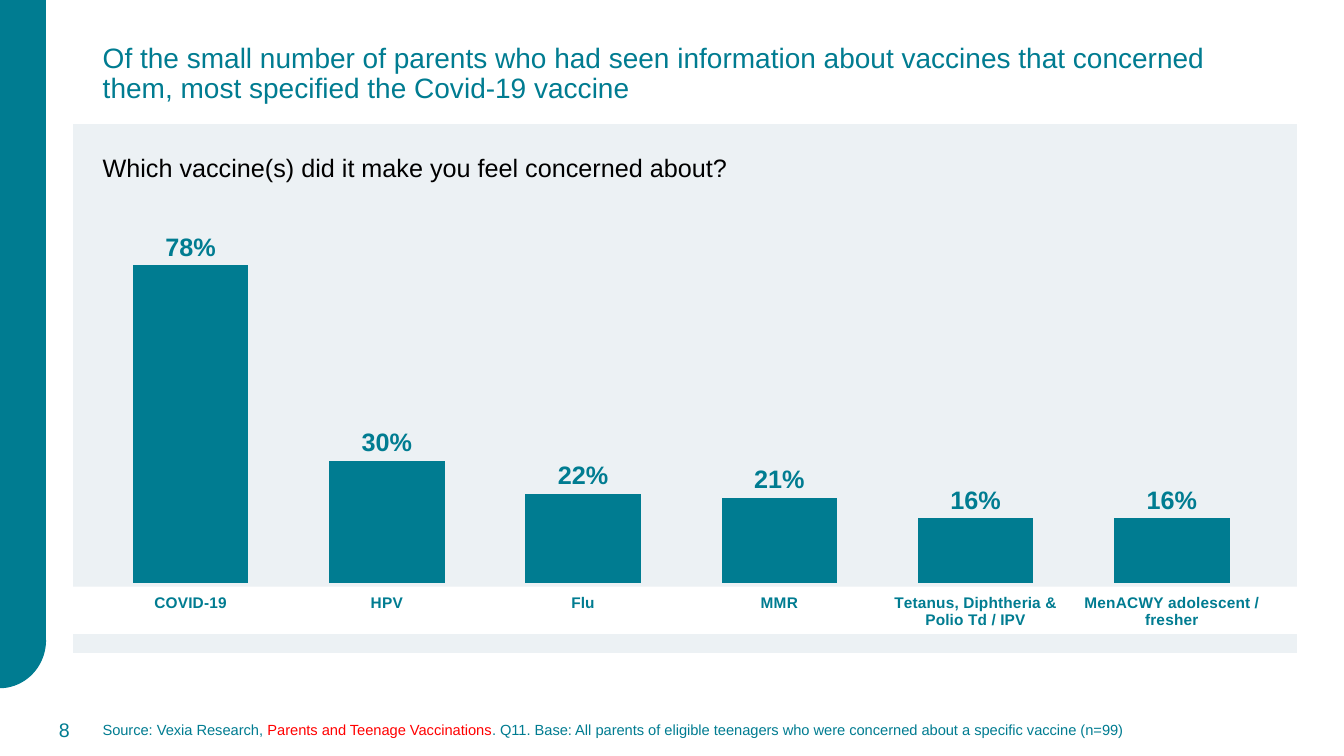
from lxml.etree import SubElement
from pptx import Presentation
from pptx.chart.data import CategoryChartData
from pptx.dml.color import RGBColor
from pptx.enum.chart import XL_CHART_TYPE, XL_LABEL_POSITION, XL_TICK_LABEL_POSITION, XL_TICK_MARK
from pptx.enum.shapes import MSO_SHAPE
from pptx.enum.text import MSO_ANCHOR, MSO_AUTO_SIZE, PP_ALIGN
from pptx.oxml.ns import qn
from pptx.util import Pt

TEAL = RGBColor(0x00, 0x7C, 0x91)
RED = RGBColor(0xFF, 0x00, 0x00)
BLACK = RGBColor(0x00, 0x00, 0x00)
WHITE = RGBColor(0xFF, 0xFF, 0xFF)
PALE_GREY = RGBColor(0xEC, 0xF1, 0xF4)

TEXT_LEFT = 66.2
PANEL_LEFT, PANEL_WIDTH = 51.1, 876.2
FOOTER_TOP, FOOTER_HEIGHT = 506.9, 28.8

VACCINE_SHARES = {
    "COVID-19": 0.78,
    "HPV": 0.30,
    "Flu": 0.22,
    "MMR": 0.21,
    "Tetanus, Diphtheria & Polio Td / IPV": 0.16,
    "MenACWY adolescent / fresher": 0.16,
}


class SlideBuilder:
    font_name = "Arial"

    def __init__(self, slide):
        self.slide = slide

    def format_font(self, font, size, color, bold=False):
        values = {"name": self.font_name, "size": Pt(size), "bold": bold}
        for name, value in values.items():
            setattr(font, name, value)
        font.color.rgb = color

    def fill_text(self, shape, runs, size, alignment=PP_ALIGN.LEFT,
                  anchor=MSO_ANCHOR.MIDDLE, line_spacing=None):
        """Fill a text shape with one paragraph of (text, colour) runs."""
        frame = shape.text_frame
        frame_format = {"word_wrap": True, "auto_size": MSO_AUTO_SIZE.NONE,
                        "vertical_anchor": anchor}
        for name, value in frame_format.items():
            setattr(frame, name, value)
        paragraph = frame.paragraphs[0]
        paragraph_format = {"alignment": alignment, "line_spacing": line_spacing}
        for name, value in paragraph_format.items():
            setattr(paragraph, name, value)
        for text, color in runs:
            run = paragraph.add_run()
            run.text = text
            self.format_font(run.font, size, color)

    def title(self, box, text, size):
        shape = self.slide.shapes.title
        for name, value in zip(("left", "top", "width", "height"), box):
            setattr(shape, name, Pt(value))
        self.fill_text(shape, [(text, TEAL)], size, line_spacing=0.9)

    def text(self, box, runs, size, **text_format):
        shape = self.slide.shapes.add_textbox(*map(Pt, box))
        self.fill_text(shape, runs, size, **text_format)

    def shape(self, kind, box, fill, line=None, line_width=1):
        shape = self.slide.shapes.add_shape(kind, *map(Pt, box))
        shape.shadow.inherit = False
        shape.fill.solid()
        shape.fill.fore_color.rgb = fill
        if line is None:
            shape.line.fill.background()
        else:
            shape.line.color.rgb = line
            shape.line.width = Pt(line_width)
        return shape

    def column_chart(self, box, shares):
        data = CategoryChartData(number_format="0%")
        data.categories = list(shares)
        data.add_series("Series 1", list(shares.values()))
        chart = self.slide.shapes.add_chart(
            XL_CHART_TYPE.COLUMN_CLUSTERED, *map(Pt, box), data).chart
        chart.has_legend = False
        chart.has_title = False
        self.format_font(chart.font, 10, BLACK)

        value_axis = chart.value_axis
        value_format = {"minimum_scale": 0, "maximum_scale": 0.9,
                        "has_major_gridlines": False, "visible": False}
        for name, value in value_format.items():
            setattr(value_axis, name, value)

        category_axis = chart.category_axis
        category_format = {"major_tick_mark": XL_TICK_MARK.NONE,
                           "minor_tick_mark": XL_TICK_MARK.NONE,
                           "tick_label_position": XL_TICK_LABEL_POSITION.LOW}
        for name, value in category_format.items():
            setattr(category_axis, name, value)
        category_axis.format.line.fill.background()
        self.format_font(category_axis.tick_labels.font, 11, TEAL, bold=True)

        plot = chart.plots[0]
        plot.gap_width = 70
        plot.vary_by_categories = False
        series = plot.series[0]
        series.format.fill.solid()
        series.format.fill.fore_color.rgb = TEAL

        labels = series.data_labels
        label_format = {"show_value": True, "number_format": "0%",
                        "number_format_is_linked": False,
                        "position": XL_LABEL_POSITION.OUTSIDE_END}
        for name, value in label_format.items():
            setattr(labels, name, value)
        self.format_font(labels.font, 18, TEAL, bold=True)
        self.place_plot(chart, x=0.01, y=0.03, w=0.99, h=0.79)

    @staticmethod
    def place_plot(chart, **fractions):
        """Fix the inner plot area as fractions of the chart frame."""
        plot_area = chart.element.find(f".//{qn('c:plotArea')}") if hasattr(
            chart, "element") else chart.plots[0].element.getparent()
        layout = plot_area.find(qn("c:layout"))
        if layout is None:
            layout = SubElement(plot_area, qn("c:layout"))
            plot_area.insert(0, layout)
        manual = SubElement(layout, qn("c:manualLayout"))
        settings = {"layoutTarget": "inner", "xMode": "edge", "yMode": "edge", **fractions}
        for name, value in settings.items():
            SubElement(manual, qn(f"c:{name}")).set("val", str(value))


def main():
    presentation = Presentation()
    presentation.slide_width = Pt(960)
    presentation.slide_height = Pt(540)
    slide = presentation.slides.add_slide(presentation.slide_layouts.get_by_name("Title Only"))
    builder = SlideBuilder(slide)

    builder.shape(MSO_SHAPE.RECTANGLE, (0, 0, 32.4, 457.2), TEAL, TEAL)
    band_end = builder.shape(MSO_SHAPE.PIE, (-33.1, 423.4, 65.5, 67.7), TEAL, TEAL)
    band_end.rotation = 180
    band_end.adjustments[0] = 108
    band_end.adjustments[1] = 162

    builder.title((TEXT_LEFT, 0.7, 828, 104.4),
                  "Of the small number of parents who had seen information about vaccines "
                  "that concerned them, most specified the Covid-19 vaccine", 20)
    builder.text((TEXT_LEFT, FOOTER_TOP, 835.2, FOOTER_HEIGHT), [
        ("Source: Vexia Research, ", TEAL),
        ("Parents and Teenage Vaccinations", RED),
        (". Q11. Base: All parents of eligible teenagers who were concerned "
         "about a specific vaccine (n=99)", TEAL),
    ], 10.5)
    builder.text((10.1, FOOTER_TOP, 46.8, FOOTER_HEIGHT), [("8", TEAL)], 14,
                 alignment=PP_ALIGN.RIGHT)

    builder.shape(MSO_SHAPE.RECTANGLE, (PANEL_LEFT, 87.8, PANEL_WIDTH, 379.4),
                  PALE_GREY, WHITE, 1.5)
    builder.shape(MSO_SHAPE.RECTANGLE, (PANEL_LEFT, 419, PANEL_WIDTH, 33.8), WHITE)
    builder.column_chart((57.6, 144.7, 849.6, 331.9), VACCINE_SHARES)
    builder.text((TEXT_LEFT, 105.1, 505.4, 28.8),
                 [("Which vaccine(s) did it make you feel concerned about?", BLACK)], 18,
                 anchor=MSO_ANCHOR.TOP)

    presentation.save("out.pptx")


if __name__ == "__main__":
    main()
